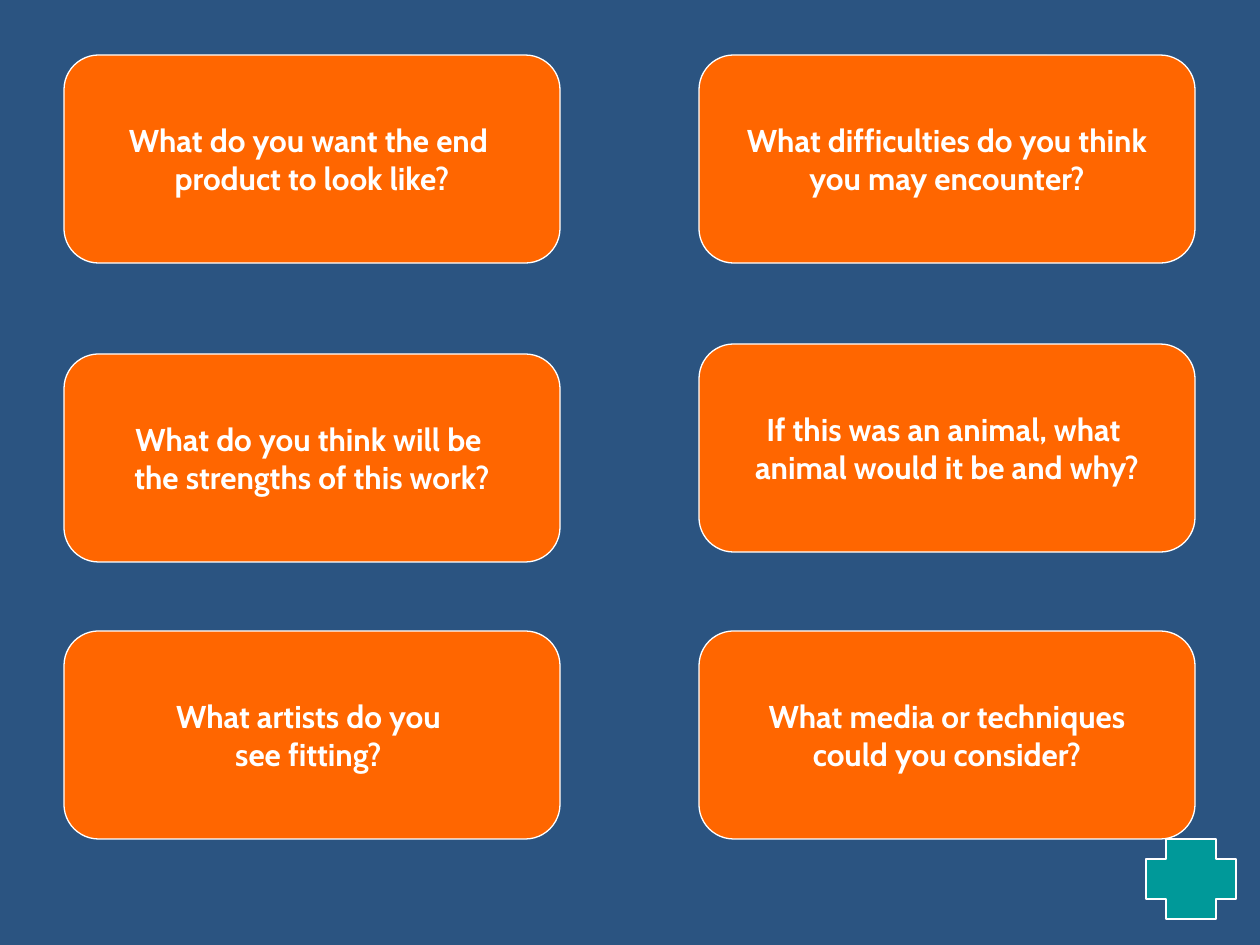
"""Build a slide of six question cards with a plus sign in the corner."""
from typing import NamedTuple

from pptx import Presentation
from pptx.dml.color import RGBColor
from pptx.enum.shapes import MSO_SHAPE as Kind
from pptx.enum.text import MSO_ANCHOR as Anchor, PP_ALIGN as Align
from pptx.util import Pt

SCALE = 914400 / 126
WIDE, HIGH = 496, 208
LEFT, RIGHT = 64, 699
TOP, LOW = 55, 631


class Card(NamedTuple):
    x: int
    y: int
    text: str


CARDS = [
    Card(LEFT, TOP, "What do you want the end \nproduct to look like?"),
    Card(LEFT, 354, "What do you think will be \nthe strengths of this work?"),
    Card(LEFT, LOW, "What artists do you \vsee fitting? "),
    Card(RIGHT, LOW, "What media or techniques\ncould you consider?"),
    Card(RIGHT, 344, "If this was an animal, what \vanimal would it be and why?"),
    Card(RIGHT, TOP, "What difficulties do you think\nyou may encounter?"),
]


def px(n: int) -> int:
    return round(n * SCALE)


def paint(fill, tone: str) -> None:
    fill.solid()
    fill.fore_color.rgb = RGBColor.from_string(tone)


def block(slide, kind: Kind, x: int, y: int, w: int, h: int, tone: str):
    shape = slide.shapes.add_shape(kind, px(x), px(y), px(w), px(h))
    shape.shadow.inherit = False
    paint(shape.fill, tone)
    paint(shape.line.fill, "FFFFFF")
    shape.line.width = Pt(0.75)
    return shape


def draw(slide, card: Card) -> None:
    shape = block(slide, Kind.ROUNDED_RECTANGLE, card.x, card.y, WIDE, HIGH, "FF6600")
    frame = shape.text_frame
    frame.text = card.text
    frame.word_wrap = False
    frame.vertical_anchor = Anchor.MIDDLE
    for para in frame.paragraphs:
        para.alignment = Align.CENTER
        for run in para.runs:
            font = run.font
            font.name, font.size, font.bold = "Cabin", Pt(18), True
            paint(font.fill, "FFFFFF")


def main() -> None:
    deck = Presentation()
    deck.slide_width, deck.slide_height = px(1260), px(945)
    slide = deck.slides.add_slide(deck.slide_layouts[6])
    paint(slide.background.fill, "2B5481")
    for card in CARDS:
        draw(slide, card)
    block(slide, Kind.CROSS, 1146, 839, 90, 80, "009999")
    deck.save("out.pptx")


if __name__ == "__main__":
    main()
